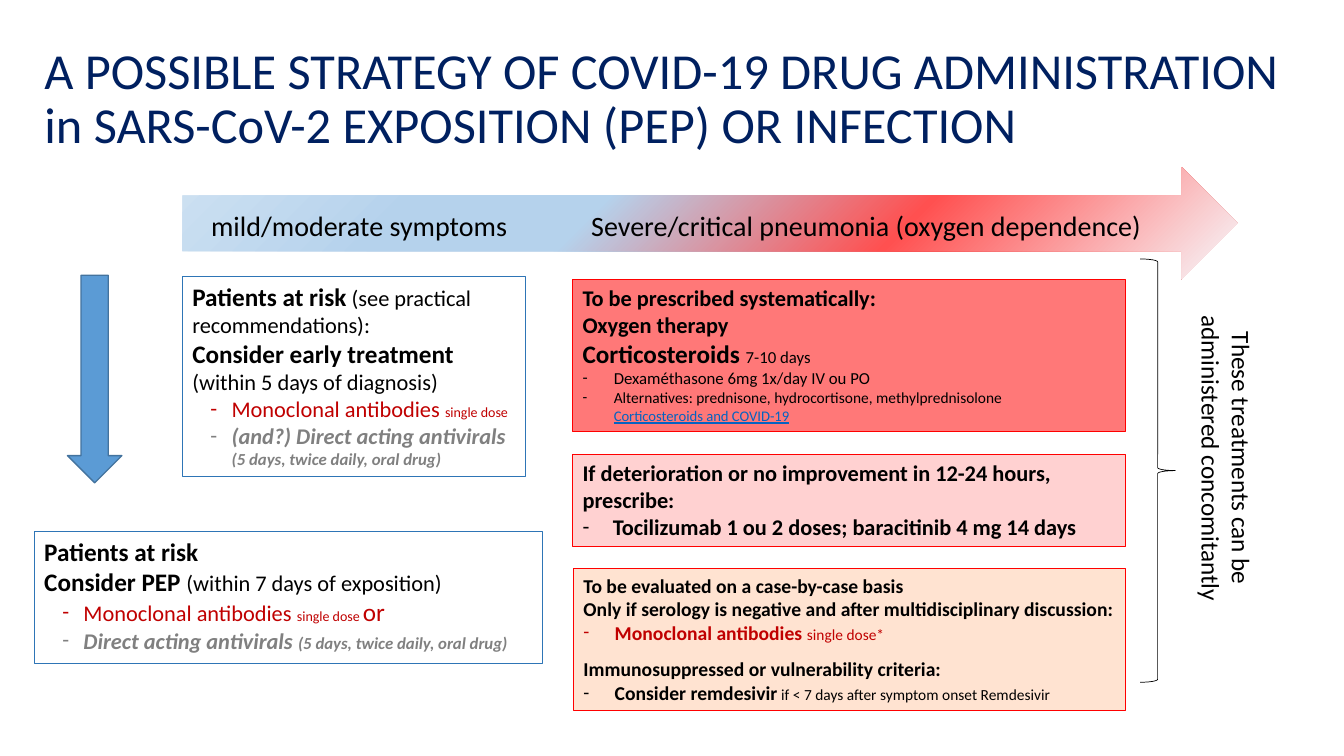
from dataclasses import dataclass

from lxml.etree import SubElement
from pptx import Presentation
from pptx.dml.color import RGBColor
from pptx.enum.shapes import MSO_SHAPE
from pptx.enum.text import MSO_ANCHOR, MSO_AUTO_SIZE, PP_ALIGN
from pptx.oxml.ns import qn
from pptx.util import Pt

BLACK, NAVY, DARK_RED, GREY = "000000", "002060", "C00000", "808080"
RED, ORANGE, BLUE, LINK_BLUE = "FF0000", "FF6600", "2E75B6", "0563C1"
SEVERITY_STOPS = [(0, "F7FAFD"), (33, "FF5050"), (61, "B5D2EC"), (77, "B5D2EC"), (100, "CEE1F2")]


@dataclass(frozen=True)
class Frame:
    left: float
    top: float
    width: float
    height: float

    def lengths(self) -> list:
        return [Pt(value) for value in (self.left, self.top, self.width, self.height)]


@dataclass(frozen=True)
class Run:
    text: str
    size: float
    color: str = BLACK
    bold: bool = False
    italic: bool = False
    underline: bool = False


@dataclass(frozen=True)
class Line:
    runs: list[Run]
    indent: float = 0
    hanging: float = 0
    space_before: float = 0


@dataclass(frozen=True)
class TreatmentBox:
    frame: Frame
    border: str
    lines: list[Line]
    fill: str | None = None
    opacity: int = 100


@dataclass(frozen=True)
class Label:
    frame: Frame
    run: Run
    margin_left: float = 7.2
    rotation: int = 0
    alignment: PP_ALIGN = PP_ALIGN.LEFT


def color_of(hex_color: str) -> RGBColor:
    return RGBColor.from_string(hex_color)


def add_run(paragraph, item: Run) -> None:
    run = paragraph.add_run()
    run.text = item.text
    font = run.font
    font.name, font.size = "Calibri", Pt(item.size)
    font.bold, font.italic, font.underline = item.bold, item.italic, item.underline
    font.color.rgb = color_of(item.color)


def write_lines(text_frame, lines: list[Line]) -> None:
    """A line with a hanging indent gets a dash as its bullet."""
    for index, line in enumerate(lines):
        paragraph = text_frame.add_paragraph() if index else text_frame.paragraphs[0]
        paragraph.alignment = PP_ALIGN.LEFT
        if line.space_before:
            paragraph.space_before = Pt(line.space_before)
        properties = paragraph._p.get_or_add_pPr()
        properties.set("marL", str(Pt(line.indent)))
        properties.set("indent", str(-Pt(line.hanging)))
        if line.hanging:
            SubElement(properties, qn("a:buFont"), typeface="Calibri")
            SubElement(properties, qn("a:buChar"), char="-")
        for run in line.runs:
            add_run(paragraph, run)


def add_outline(slide, preset: MSO_SHAPE, frame: Frame, line: str | None = None,
                weight: float = 0.75, fill: str | None = None):
    shape = slide.shapes.add_shape(preset, *frame.lengths())
    shape.shadow.inherit = False
    if fill:
        shape.fill.solid()
        shape.fill.fore_color.rgb = color_of(fill)
    else:
        shape.fill.background()
    if line:
        shape.line.color.rgb = color_of(line)
        shape.line.width = Pt(weight)
    else:
        shape.line.fill.background()
    return shape


def add_treatment_box(slide, box: TreatmentBox) -> None:
    shape = add_outline(slide, MSO_SHAPE.RECTANGLE, box.frame, box.border, fill=box.fill)
    if box.opacity < 100:
        fill_color = shape._element.spPr.find(qn("a:solidFill"))[0]
        SubElement(fill_color, qn("a:alpha"), val=str(box.opacity * 1000))
    text_frame = shape.text_frame
    text_frame.word_wrap = True
    text_frame.auto_size = MSO_AUTO_SIZE.SHAPE_TO_FIT_TEXT
    text_frame.vertical_anchor = MSO_ANCHOR.TOP
    write_lines(text_frame, box.lines)


def add_label(slide, label: Label) -> None:
    shape = slide.shapes.add_textbox(*label.frame.lengths())
    shape.rotation = label.rotation
    text_frame = shape.text_frame
    text_frame.word_wrap = True
    text_frame.auto_size = MSO_AUTO_SIZE.SHAPE_TO_FIT_TEXT
    text_frame.margin_left = Pt(label.margin_left)
    paragraph = text_frame.paragraphs[0]
    paragraph.alignment = label.alignment
    add_run(paragraph, label.run)


def add_severity_arrow(slide) -> None:
    """Radial gradient spreading from the bottom right corner."""
    arrow = add_outline(slide, MSO_SHAPE.RIGHT_ARROW, Frame(130.3, 119.5, 753.8, 79.9))
    no_fill = arrow._element.spPr.find(qn("a:noFill"))
    gradient = SubElement(arrow._element.spPr, qn("a:gradFill"), rotWithShape="1")
    no_fill.getparent().replace(no_fill, gradient)
    stops = SubElement(gradient, qn("a:gsLst"))
    for position, color in SEVERITY_STOPS:
        stop = SubElement(stops, qn("a:gs"), pos=str(position * 1000))
        SubElement(stop, qn("a:srgbClr"), val=color)
    circle = SubElement(gradient, qn("a:path"), path="circle")
    SubElement(circle, qn("a:fillToRect"), l="100000", t="100000")
    SubElement(gradient, qn("a:tileRect"), r="-100000", b="-100000")


def add_title(slide, text: str) -> None:
    title = slide.shapes.title
    title.left, title.top, title.width, title.height = Frame(24.5, 19.4, 898.6, 104.4).lengths()
    title.text_frame.auto_size = MSO_AUTO_SIZE.NONE
    title.text_frame.word_wrap = True
    title.text_frame.vertical_anchor = MSO_ANCHOR.MIDDLE
    paragraph = title.text_frame.paragraphs[0]
    paragraph.alignment = PP_ALIGN.LEFT
    paragraph.line_spacing = 0.9
    add_run(paragraph, Run(text, 36, NAVY))


def heading(text: str, size: float = 16) -> Run:
    return Run(text, size, bold=True)


def antiviral(text: str, size: float = 16) -> Run:
    return Run(text, size, GREY, bold=True, italic=True)


NARROW = (28.1, 15.1)
WIDE = (22.3, 22.3)
ANTIBODIES = Run("Monoclonal antibodies ", 16, DARK_RED)
ORAL_COURSE = antiviral("(5 days, twice daily, oral drug)", 12)

BOXES = [
    TreatmentBox(Frame(130.3, 197.3, 244.8, 143.3), BLUE, [
        Line([heading("Patients at risk", 18), Run(" (see practical recommendations):", 16)]),
        Line([heading("Consider early treatment", 18)]),
        Line([Run("(within 5 days of diagnosis)", 16)]),
        Line([ANTIBODIES, Run("single dose", 10, DARK_RED)], *NARROW),
        Line([antiviral("(and?) Direct acting antivirals "), ORAL_COURSE], *NARROW)]),
    TreatmentBox(Frame(24.5, 379.4, 362.9, 94.3), BLUE, [
        Line([heading("Patients at risk", 18)]),
        Line([heading("Consider PEP ", 18), Run("(within 7 days of exposition)", 16)]),
        Line([ANTIBODIES, Run("single dose ", 10, DARK_RED), Run("or", 18, DARK_RED)], *NARROW),
        Line([antiviral("Direct acting antivirals "), ORAL_COURSE], *NARROW)]),
    TreatmentBox(Frame(409, 199.4, 394.6, 108.7), RED, [
        Line([heading("To be prescribed systematically:")]),
        Line([heading("Oxygen therapy")]),
        Line([heading("Corticosteroids ", 18), Run("7-10 days", 12)]),
        Line([Run("Dexaméthasone 6mg 1x/day IV ou PO", 12)], *WIDE),
        Line([Run("Alternatives: prednisone, hydrocortisone, methylprednisolone", 11)], *WIDE),
        Line([Run("Corticosteroids and COVID-19", 10.5, LINK_BLUE, underline=True)], WIDE[0]),
    ], RED, 53),
    TreatmentBox(Frame(409, 324.7, 394.6, 65.5), RED, [
        Line([heading("If deterioration or no improvement in 12-24 hours, prescribe:")]),
        Line([heading("Tocilizumab 1 ou 2 doses; baracitinib 4 mg 14 days")], 21.6, 21.6),
    ], RED, 18),
    TreatmentBox(Frame(409.7, 406.1, 394.6, 101.5), RED, [
        Line([heading("To be evaluated on a case-by-case basis", 14)]),
        Line([heading("Only if serology is negative and after multidisciplinary discussion:", 14)]),
        Line([Run("Monoclonal antibodies ", 14, DARK_RED, bold=True),
              Run("single dose*", 11, DARK_RED)], *WIDE),
        Line([heading("Immunosuppressed or vulnerability criteria:", 14)], space_before=9.5),
        Line([heading("Consider remdesivir", 14),
              Run(" if < 7 days after symptom onset Remdesivir", 11)], *WIDE),
    ], ORANGE, 18),
]
LABELS = [
    Label(Frame(130.3, 145.4, 265, 31.5), Run("mild/moderate symptoms", 20), 20.5),
    Label(Frame(395.3, 145.4, 463, 31.5),
          Run("Severe/critical pneumonia (oxygen dependence)", 20), 27),
    Label(Frame(733.7, 301.7, 284.4, 51.1),
          Run("These treatments can be administered concomitantly", 18),
          rotation=90, alignment=PP_ALIGN.CENTER),
]


def main() -> None:
    presentation = Presentation()
    presentation.slide_width, presentation.slide_height = Pt(960), Pt(540)
    slide = presentation.slides.add_slide(presentation.slide_layouts[5])
    add_title(slide, "A POSSIBLE STRATEGY OF COVID-19 DRUG ADMINISTRATION "
                     "in SARS-CoV-2 EXPOSITION (PEP) OR INFECTION")
    add_severity_arrow(slide)
    add_outline(slide, MSO_SHAPE.DOWN_ARROW, Frame(48.2, 196.6, 38.9, 148.3), "43739E", 1, "5B9BD5")
    add_outline(slide, MSO_SHAPE.RIGHT_BRACE, Frame(814.3, 185, 25.2, 302.4), BLACK, 0.5)
    for box in BOXES:
        add_treatment_box(slide, box)
    for label in LABELS:
        add_label(slide, label)
    presentation.save("out.pptx")


if __name__ == "__main__":
    main()
